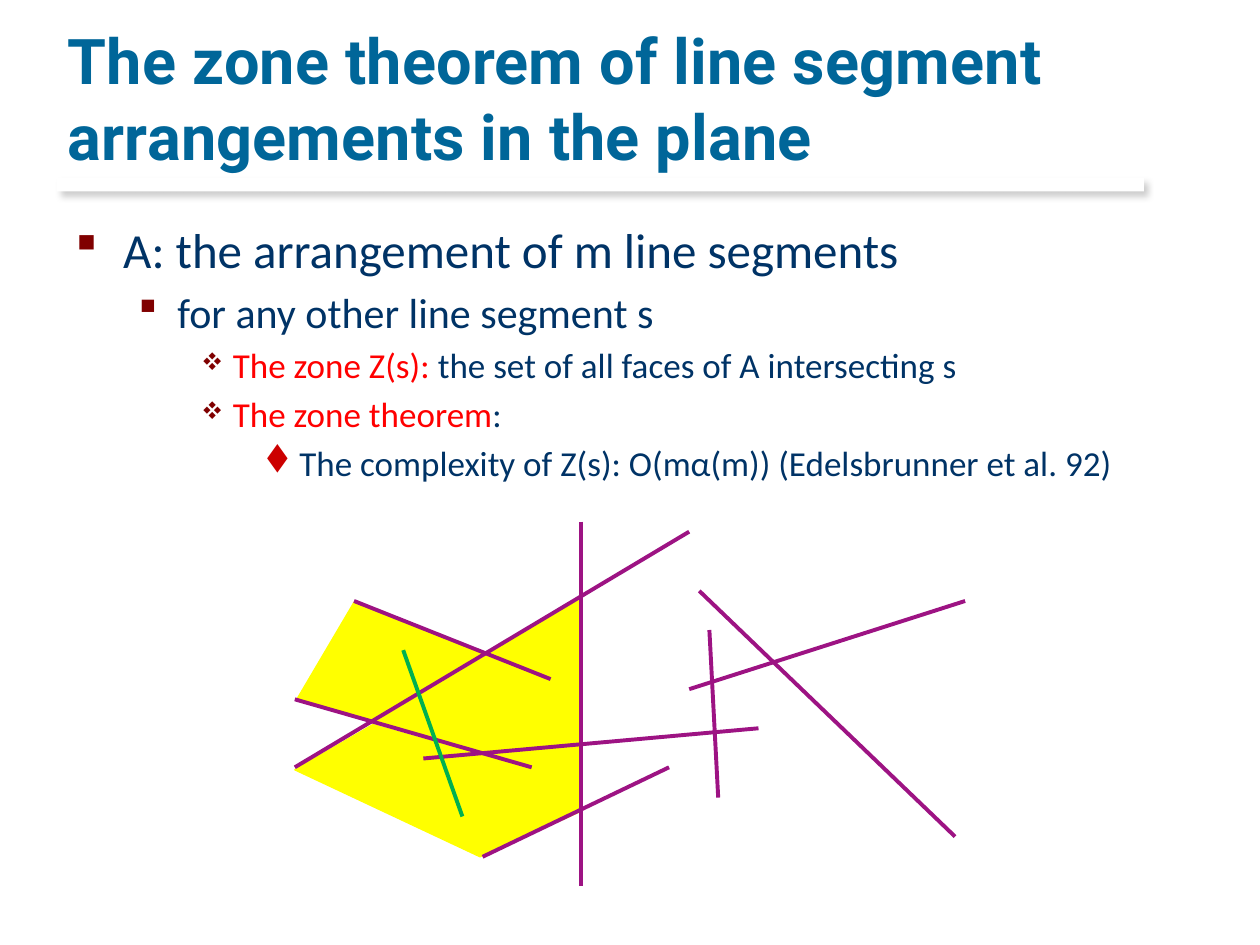
from lxml import etree
from pptx import Presentation
from pptx.dml.color import RGBColor
from pptx.enum import shapes as sh, text as tx
from pptx.oxml import ns
from pptx.util import Inches, Pt

NAVY, RED, MAROON = "003366", "FF0000", "800000"
PURPLE, GREEN, YELLOW = "9D1383", "00B050", "FFFF00"
TITLE = "The zone theorem of line segment arrangements in the plane"
LEVELS = [
    (28, 0.38, 0.38, "§", MAROON, 100),
    (24, 0.81, 0.31, "§", MAROON, 100),
    (20, 1.25, 0.25, "v", MAROON, 70),
    (20, 1.75, 0.25, "t", "CC0000", 100),
]
BODY = [
    (0, [("A: the arrangement of m line segments", NAVY)]),
    (1, [("for any other line segment s", NAVY)]),
    (2, [("The zone Z(s): ", RED),
         ("the set of all faces of A intersecting s", NAVY)]),
    (2, [("The zone theorem", RED), (":", NAVY)]),
    (3, [("The complexity of Z(s): O(mα(m)) (Edelsbrunner et al. 92)", NAVY)]),
]
FACES = [
    [(2.34, 6.11), (2.96, 5.75), (3.81, 5.99), (4.6, 5.92), (4.61, 6.44),
     (3.81, 6.8)],
    [(2.98, 5.73), (3.06, 5.74), (3.83, 5.99), (4.62, 5.92), (4.62, 4.75)],
    [(2.35, 5.56), (2.96, 5.72), (3.84, 5.19), (2.81, 4.78)],
]
SEGMENTS = [
    (2.34, 6.09, 5.47, 4.22), (2.81, 4.77, 4.37, 5.39),
    (2.34, 5.55, 4.22, 6.09), (3.83, 6.8, 5.31, 6.09),
    (5.55, 4.69, 7.58, 6.64), (4.61, 4.14, 4.61, 7.03),
    (5.47, 5.47, 7.66, 4.77), (5.63, 5, 5.7, 6.33),
    (3.36, 6.02, 6.02, 5.78),
]
CUT = (3.2, 5.16, 3.67, 6.48)


def color(value):
    return RGBColor.from_string(value)


def add(parent, tag, **attrs):
    node = etree.SubElement(parent, ns.qn(tag))
    for key, value in attrs.items():
        node.set(key, str(value))
    return node


def paint(shape, fill, line=None):
    shape.shadow.inherit = False
    shape.fill.solid()
    shape.fill.fore_color.rgb = color(fill)
    if line:
        shape.line.color.rgb = color(line)
        shape.line.width = Pt(0.75)
    else:
        shape.line.fill.background()


def add_rule(slide):
    bar = slide.shapes.add_shape(
        sh.MSO_SHAPE.RECTANGLE, *map(Inches, (0.45, 1.41, 8.63, 0.11)))
    paint(bar, "FFFFFF")
    effects = bar._element.spPr.find(ns.qn("a:effectLst"))
    shade = add(effects, "a:outerShdw", blurRad=Pt(4), dist=Pt(3),
                dir=45 * 60000, algn="tl", rotWithShape=0)
    add(add(shade, "a:srgbClr", val="000000"), "a:alpha", val=20000)


def add_face(slide, points):
    dots = [(Inches(x), Inches(y)) for x, y in points]
    pen = slide.shapes.build_freeform(*dots[0])
    pen.add_line_segments(dots[1:], close=True)
    paint(pen.convert_to_shape(), YELLOW, YELLOW)


def add_line(slide, ends, hue):
    line = slide.shapes.add_connector(
        sh.MSO_CONNECTOR.STRAIGHT, *map(Inches, ends))
    line.line.color.rgb = color(hue)
    line.line.width = Pt(2.25)
    add(line._element.spPr, "a:effectLst")


def add_frame(slide, box, anchor):
    frame = slide.shapes.add_textbox(*map(Inches, box)).text_frame
    frame.word_wrap = True
    frame.vertical_anchor = anchor
    return frame


def style(run, face, size, hue, bold=False):
    run.font.name = face
    run.font.size = Pt(size)
    run.font.bold = bold
    run.font.color.rgb = color(hue)


def add_title(slide):
    frame = add_frame(slide, (0.44, 0.17, 8.5, 1.25), tx.MSO_ANCHOR.BOTTOM)
    frame.text = TITLE
    run = frame.paragraphs[0].runs[0]
    style(run, "Roboto", 36, "006699", True)
    run.font._element.set("spc", "10")


def add_body(slide):
    frame = add_frame(slide, (0.5, 1.69, 8.94, 5.03), tx.MSO_ANCHOR.TOP)
    for i, (level, parts) in enumerate(BODY):
        para = frame.add_paragraph() if i else frame.paragraphs[0]
        size, left, hang, mark, hue, scale = LEVELS[level]
        para.level = level
        props = para._p.get_or_add_pPr()
        props.set("marL", str(Inches(left)))
        props.set("indent", str(-Inches(hang)))
        add(add(props, "a:spcBef"), "a:spcPct", val=20000)
        add(add(props, "a:buClr"), "a:srgbClr", val=hue)
        add(props, "a:buSzPct", val=scale * 1000)
        add(props, "a:buFont", typeface="Wingdings", pitchFamily=2, charset=2)
        add(props, "a:buChar", char=mark)
        for words, ink in parts:
            run = para.add_run()
            run.text = words
            style(run, "Calibri", size, ink)


def main():
    deck = Presentation()
    deck.slide_width, deck.slide_height = Inches(10), Inches(7.5)
    slide = deck.slides.add_slide(deck.slide_layouts[6])
    add_rule(slide)
    for points in FACES:
        add_face(slide, points)
    add_title(slide)
    add_body(slide)
    for ends in SEGMENTS:
        add_line(slide, ends, PURPLE)
    add_line(slide, CUT, GREEN)
    deck.save("out.pptx")


if __name__ == "__main__":
    main()
